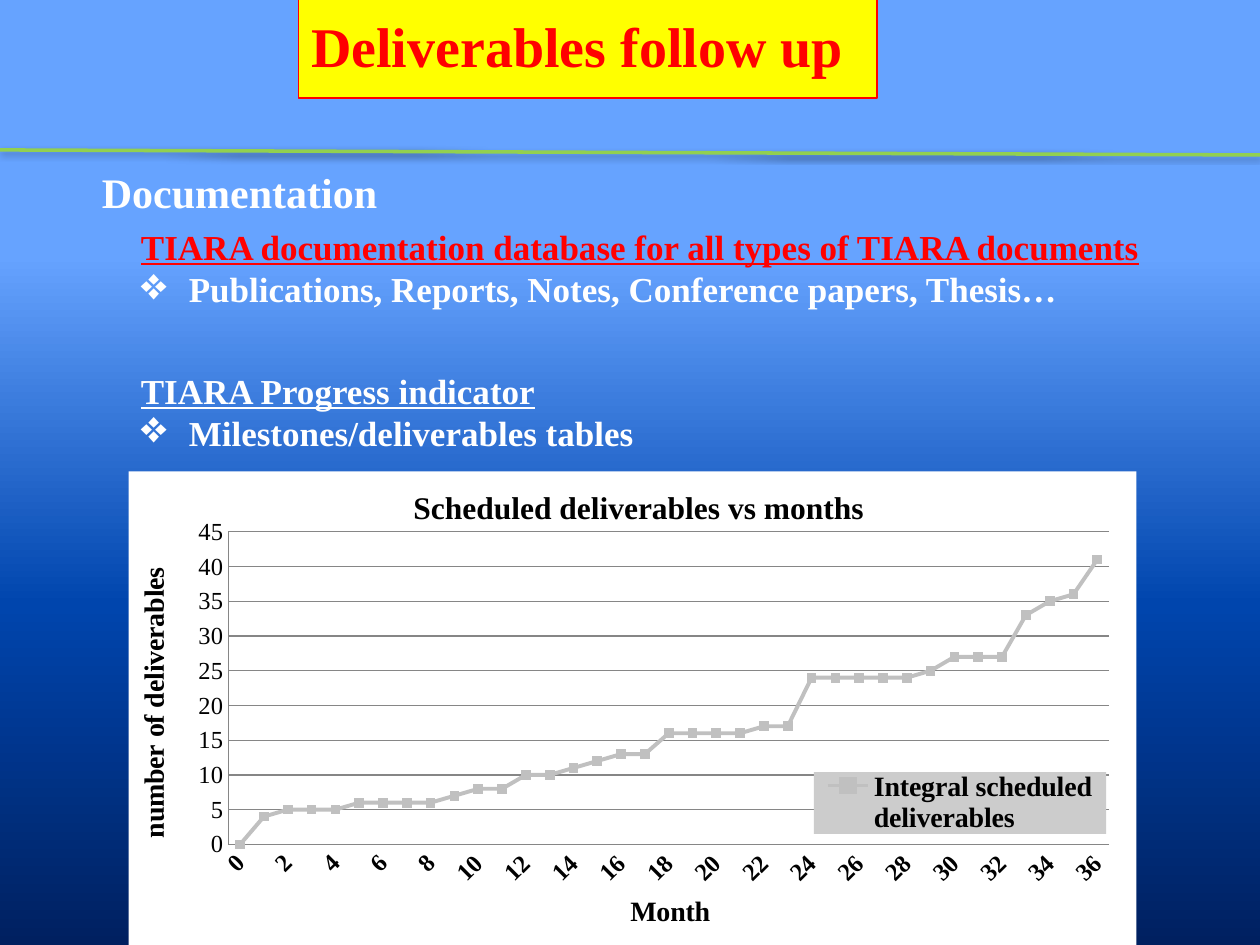
import pptx
import pptx.chart.data
import pptx.dml.color
import pptx.enum.chart
import pptx.enum.shapes
import pptx.enum.text
import pptx.oxml
import pptx.oxml.ns
import pptx.util

Inches = pptx.util.Inches
Pt = pptx.util.Pt

COLORS = {
    "title_fill": "FFFF00", "accent": "FF0000", "text": "FFFFFF",
    "rule": "92D050", "chart_text": "000000", "chart_fill": "FFFFFF",
    "legend_fill": "CCCCCC", "series": "C0C0C0", "grid": "868686",
}
BACKGROUND_STOPS = [(27, "66A3FF"), (64, "0045AD"), (100, "002060")]
MONTHLY_TOTALS = [
    0, 4, 5, 5, 5, 6, 6, 6, 6, 7, 8, 8, 10, 10, 11, 12, 13, 13, 16, 16, 16,
    16, 17, 17, 24, 24, 24, 24, 24, 25, 27, 27, 27, 33, 35, 36, 41,
]


def rgb(name):
    return pptx.dml.color.RGBColor.from_string(COLORS[name])


def make_xml(markup):
    """Parse markup whose root tag carries the placeholder NS for namespaces."""
    return pptx.oxml.parse_xml(markup.replace("NS", pptx.oxml.ns.nsdecls("a", "c"), 1))


def solid_properties(color):
    return make_xml(f'<c:spPr NS><a:solidFill><a:srgbClr val="{COLORS[color]}"/>'
                    '</a:solidFill><a:ln><a:noFill/></a:ln></c:spPr>')


def set_layout(element, left, top, width=None, height=None, inner=False):
    """Place a chart part by percentages of the chart area."""
    for old in element.xpath("c:layout"):
        element.remove(old)
    sizes = [("x", left), ("y", top), ("w", width), ("h", height)]
    target = '<c:layoutTarget val="inner"/>' if inner else ""
    modes = "".join(f'<c:{key}Mode val="edge"/>' for key in "xy")
    values = "".join(f'<c:{key} val="{value / 100:.3f}"/>'
                     for key, value in sizes if value is not None)
    layout = make_xml(f"<c:layout NS><c:manualLayout>{target}{modes}{values}"
                      "</c:manualLayout></c:layout>")
    overlays = element.xpath("c:overlay")
    if overlays:
        overlays[0].addprevious(layout)
    else:
        element.insert(0, layout)


class SlideBuilder:
    font_name = "Times New Roman"

    def __init__(self, presentation):
        self.slide = presentation.slides.add_slide(presentation.slide_layouts[5])

    def style(self, font, size, color, bold=True, underline=None):
        font.name = self.font_name
        font.size = Pt(size)
        font.bold = bold
        font.underline = underline
        font.color.rgb = rgb(color)

    def background(self):
        fill = self.slide.background.fill
        fill.gradient()
        fill.gradient_angle = 270
        stop_list = self.slide.element.xpath("p:cSld/p:bg//a:gsLst")[0]
        for stop in list(stop_list):
            stop_list.remove(stop)
        for position, color in BACKGROUND_STOPS:
            stop_list.append(make_xml(f'<a:gs NS pos="{position * 1000}">'
                                      f'<a:srgbClr val="{color}"/></a:gs>'))

    def rule(self, start, end):
        line = self.slide.shapes.add_connector(
            pptx.enum.shapes.MSO_CONNECTOR.STRAIGHT,
            *(Inches(value) for value in start + end))
        line.line.color.rgb = rgb("rule")
        line.line.width = Pt(2)
        line.element.spPr.append(make_xml(
            '<a:effectLst NS><a:outerShdw blurRad="39370" dist="20320" dir="5400000">'
            '<a:srgbClr val="000000"><a:alpha val="38000"/></a:srgbClr>'
            "</a:outerShdw></a:effectLst>"))

    def title(self, text, box):
        title = self.slide.shapes.title
        title.left, title.top, title.width, title.height = map(Inches, box)
        title.fill.solid()
        title.fill.fore_color.rgb = rgb("title_fill")
        title.line.color.rgb = rgb("accent")
        title.line.width = Pt(0.75)
        frame = title.text_frame
        frame.text = text
        frame.word_wrap = False
        frame.auto_size = pptx.enum.text.MSO_AUTO_SIZE.SHAPE_TO_FIT_TEXT
        frame.paragraphs[0].alignment = pptx.enum.text.PP_ALIGN.LEFT
        self.style(frame.paragraphs[0].runs[0].font, 32, "accent")

    def text(self, heading, box, size=20, color="text", underline=True, bullets=()):
        frame = self.slide.shapes.add_textbox(*map(Inches, box)).text_frame
        frame.word_wrap = False
        frame.auto_size = pptx.enum.text.MSO_AUTO_SIZE.SHAPE_TO_FIT_TEXT
        frame.text = heading
        self.style(frame.paragraphs[0].runs[0].font, size, color, underline=underline)
        for bullet in bullets:
            paragraph = frame.add_paragraph()
            paragraph.text = bullet
            properties = paragraph._p.get_or_add_pPr()
            properties.set("marL", str(Inches(0.38)))
            properties.set("indent", str(-Inches(0.38)))
            properties.append(make_xml('<a:buSzPct NS val="130000"/>'))
            properties.append(make_xml('<a:buChar NS char="❖"/>'))
            self.style(paragraph.runs[0].font, size, "text", underline=False)

    def chart_title(self, title, text, size, left, top):
        title.text_frame.text = text
        self.style(title.text_frame.paragraphs[0].runs[0].font, size, "chart_text")
        set_layout(title._element, left, top)

    def axis(self, axis, text, left, top, bold):
        self.chart_title(axis.axis_title, text, 16, left, top)
        axis.major_tick_mark = pptx.enum.chart.XL_TICK_MARK.NONE
        axis.format.line.color.rgb = rgb("grid")
        self.style(axis.tick_labels.font, 14, "chart_text", bold)

    def line_chart(self, box):
        data = pptx.chart.data.CategoryChartData()
        data.categories = [str(month) for month in range(len(MONTHLY_TOTALS))]
        data.add_series("Integral scheduled deliverables", MONTHLY_TOTALS)
        chart = self.slide.shapes.add_chart(
            pptx.enum.chart.XL_CHART_TYPE.LINE_MARKERS, *map(Inches, box), data).chart
        self.style(chart.font, 10, "chart_text", None)
        root = chart.element
        root.xpath("c:chart")[0].addnext(solid_properties("chart_fill"))
        set_layout(root.xpath("c:chart/c:plotArea")[0], 9.9, 12.8, 87.4, 66, inner=True)
        self.chart_title(chart.chart_title, "Scheduled deliverables vs months", 18, 27.7, 2.3)

        months, totals = chart.category_axis, chart.value_axis
        self.axis(months, "Month", 49.3, 88.1, True)
        self.axis(totals, "number of deliverables", 0.2, 19.2, False)
        root.xpath("//c:catAx/c:txPr/a:bodyPr")[0].set("rot", "-2700000")
        root.xpath("//c:catAx/c:lblOffset")[0].addnext(
            make_xml('<c:tickLblSkip NS val="2"/>'))
        totals.minimum_scale, totals.maximum_scale, totals.major_unit = 0, 45, 5
        totals.major_gridlines.format.line.color.rgb = rgb("grid")

        plot = chart.plots[0]
        plot.vary_by_categories = False
        series = plot.series[0]
        series.smooth = False
        series.format.line.color.rgb = rgb("series")
        series.format.line.width = Pt(2.25)
        series.marker.style = pptx.enum.chart.XL_MARKER_STYLE.SQUARE
        series.marker.size = 5
        series.marker.format.fill.solid()
        series.marker.format.fill.fore_color.rgb = rgb("series")
        series.marker.format.line.color.rgb = rgb("series")

        chart.has_legend = True
        chart.legend.position = pptx.enum.chart.XL_LEGEND_POSITION.RIGHT
        chart.legend.include_in_layout = False
        self.style(chart.legend.font, 16, "chart_text")
        legend = root.xpath("c:chart/c:legend")[0]
        set_layout(legend, 68, 63.4, 29, 13)
        legend.xpath("c:overlay")[0].addnext(solid_properties("legend_fill"))


def main():
    presentation = pptx.Presentation()
    presentation.slide_width, presentation.slide_height = Inches(10), Inches(7.5)
    builder = SlideBuilder(presentation)
    builder.background()
    builder.rule((10, 1.23), (0, 1.19))
    builder.title("Deliverables follow up", (2.37, 0.04, 4.59, 0.64))
    builder.text("Documentation", (0.71, 1.27, 2.41, 0.5), size=24, underline=None)
    builder.text("TIARA documentation database for all types of TIARA documents",
                 (1.02, 1.74, 8.18, 0.77), color="accent",
                 bullets=["Publications, Reports, Notes, Conference papers, Thesis…"])
    builder.text("TIARA Progress indicator", (1.02, 2.88, 4.3, 0.77),
                 bullets=["Milestones/deliverables tables"])
    builder.line_chart((1.02, 3.74, 8, 3.76))
    presentation.save("out.pptx")


if __name__ == "__main__":
    main()
